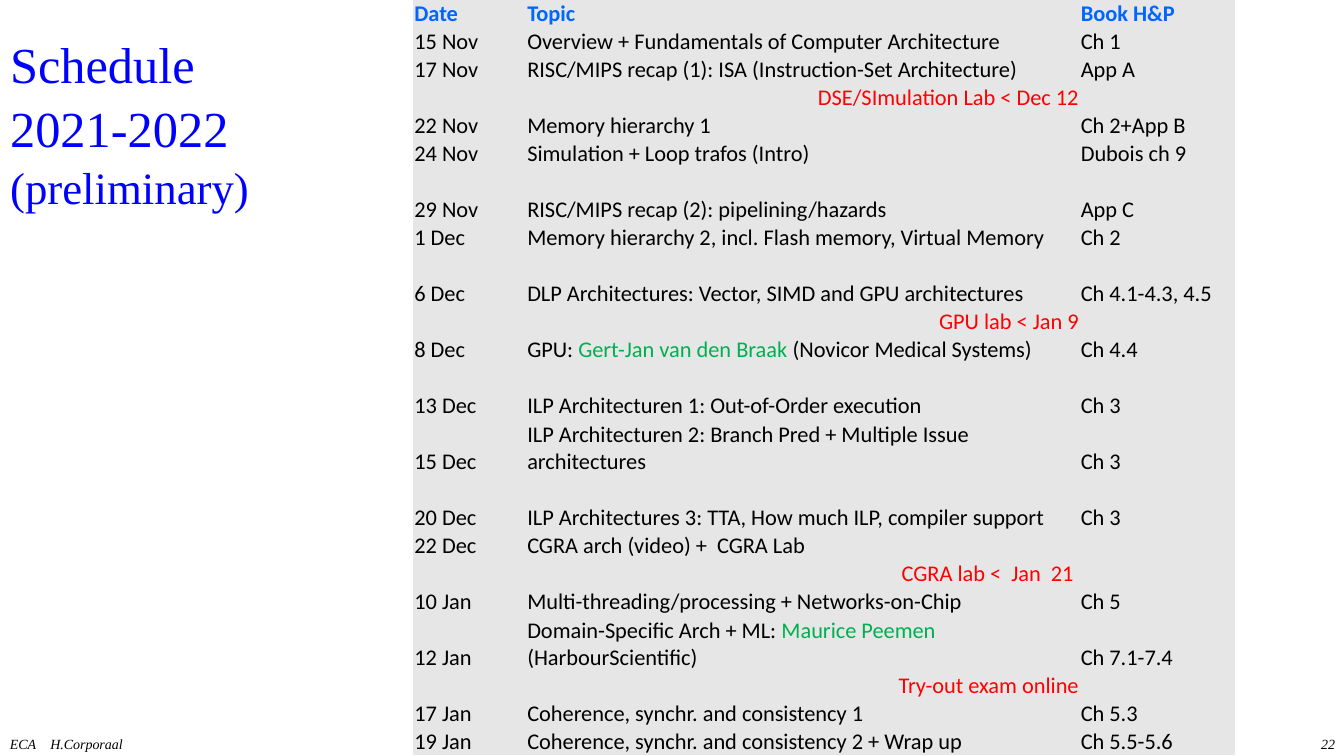
from dataclasses import dataclass

from lxml import etree
from pptx import Presentation
from pptx.dml.color import RGBColor
from pptx.enum.text import MSO_ANCHOR, MSO_AUTO_SIZE, PP_ALIGN
from pptx.oxml.ns import qn
from pptx.util import Inches, Pt

LEFT, RIGHT = PP_ALIGN.LEFT, PP_ALIGN.RIGHT
MIDDLE, BOTTOM = MSO_ANCHOR.MIDDLE, MSO_ANCHOR.BOTTOM
NO_AUTOFIT = MSO_AUTO_SIZE.NONE
TITLE_ONLY = 5
PLAIN_TABLE_STYLE = "{2D5ABB26-0587-4C30-8999-92F81FD0307C}"


@dataclass(frozen=True)
class Theme:
    """Colours, fonts and type sizes of the slide."""

    title: str = "0000FF"
    heading: str = "0066FF"
    text: str = "000000"
    deadline: str = "FF0000"
    speaker: str = "00B050"
    panel: str = "E6E6E6"
    serif: str = "Times New Roman"
    sans: str = "Calibri"
    title_size: int = 36
    subtitle_size: int = 32
    table_size: int = 16
    footer_size: int = 10


THEME = Theme()

HEADINGS = ("Date", "Topic", "Book H&P")
COLUMN_WIDTHS = (1.12, 5.49, 1.54)
TWO_LINE_DATES = {"15 Dec", "12 Jan"}
WEEK_BREAK = ()
SCHEDULE = [
    ("15 Nov", "Overview + Fundamentals of Computer Architecture", "Ch 1"),
    ("17 Nov", "RISC/MIPS recap (1): ISA (Instruction-Set Architecture)", "App A"),
    ("DSE/SImulation Lab < Dec 12",),
    ("22 Nov", "Memory hierarchy 1", "Ch 2+App B"),
    ("24 Nov", "Simulation + Loop trafos (Intro)", "Dubois ch 9"),
    WEEK_BREAK,
    ("29 Nov", "RISC/MIPS recap (2): pipelining/hazards", "App C"),
    ("1 Dec", "Memory hierarchy 2, incl. Flash memory, Virtual Memory", "Ch 2"),
    WEEK_BREAK,
    ("6 Dec", "DLP Architectures: Vector, SIMD and GPU architectures", "Ch 4.1-4.3, 4.5"),
    ("GPU lab < Jan 9",),
    ("8 Dec", ("GPU: ", "Gert-Jan van den Braak", " (Novicor Medical Systems)"), "Ch 4.4"),
    WEEK_BREAK,
    ("13 Dec", "ILP Architecturen 1: Out-of-Order execution", "Ch 3"),
    ("15 Dec", "ILP Architecturen 2: Branch Pred + Multiple Issue architectures", "Ch 3"),
    WEEK_BREAK,
    ("20 Dec", "ILP Architectures 3: TTA, How much ILP, compiler support", "Ch 3"),
    ("22 Dec", "CGRA arch (video) +  CGRA Lab", ""),
    ("CGRA lab <  Jan  21 ",),
    ("10 Jan", "Multi-threading/processing + Networks-on-Chip", "Ch 5"),
    ("12 Jan", ("Domain-Specific Arch + ML: ", "Maurice Peemen", " (HarbourScientific)"), "Ch 7.1-7.4"),
    ("Try-out exam online",),
    ("17 Jan", "Coherence, synchr. and consistency 1", "Ch 5.3"),
    ("19 Jan", "Coherence, synchr. and consistency 2 + Wrap up", "Ch 5.5-5.6"),
]


def write(paragraph, text, size, font=THEME.serif, color=THEME.text,
          bold=False, italic=False, align=LEFT):
    """Append one formatted run to a paragraph."""
    paragraph.alignment = align
    run = paragraph.add_run()
    run.text = text
    run.font.size = Pt(size)
    run.font.name = font
    run.font.bold = bold
    run.font.italic = italic
    run.font.color.rgb = RGBColor.from_string(color)


def add_title(slide, left, top, width, height):
    """Fill the title placeholder with the three-line heading."""
    title = slide.shapes.title
    title.left, title.top = Inches(left), Inches(top)
    title.width, title.height = Inches(width), Inches(height)
    frame = title.text_frame
    frame.auto_size = NO_AUTOFIT
    frame.vertical_anchor = MIDDLE
    heading = frame.paragraphs[0]
    heading.line_spacing = 1.05
    for line in ("Schedule ", "2021-2022 "):
        write(heading, line, THEME.title_size, color=THEME.title)
        heading.add_line_break()
    write(heading, "(preliminary)", THEME.subtitle_size, color=THEME.title)


def add_footer(slide, text, left, top, width, height, align=LEFT, tab=None):
    """Place one italic footer text, with an optional tab stop."""
    box = slide.shapes.add_textbox(Inches(left), Inches(top), Inches(width), Inches(height))
    box.text_frame.word_wrap = True
    paragraph = box.text_frame.paragraphs[0]
    write(paragraph, text, THEME.footer_size, italic=True, align=align)
    if tab:
        stops = etree.SubElement(paragraph._p.get_or_add_pPr(), qn("a:tabLst"))
        etree.SubElement(stops, qn("a:tab"), pos=str(Inches(tab)), algn="l")


def fill_cell(cell, content, **style):
    """Format one schedule cell; a three-part content names a guest speaker."""
    cell.fill.solid()
    cell.fill.fore_color.rgb = RGBColor.from_string(THEME.panel)
    cell.vertical_anchor = BOTTOM
    cell.margin_left = cell.margin_right = Inches(0.01)
    cell.margin_top = cell.margin_bottom = Inches(0)
    paragraph = cell.text_frame.paragraphs[0]
    if not content:
        etree.SubElement(paragraph._p, qn("a:endParaRPr"), sz=str(THEME.table_size * 100))
    elif isinstance(content, tuple):
        for part, color in zip(content, (THEME.text, THEME.speaker, THEME.text)):
            write(paragraph, part, THEME.table_size, font=THEME.sans, color=color)
    else:
        write(paragraph, content, THEME.table_size, font=THEME.sans, **style)


def add_schedule(slide, left, top, width, height):
    """Build the lecture table, sharing its height out by text lines."""
    entries = [HEADINGS, *SCHEDULE]
    frame = slide.shapes.add_table(len(entries), len(HEADINGS), Inches(left), Inches(top),
                                   Inches(width), Inches(height))
    table = frame.table
    table.first_row = table.horz_banding = False
    table._tbl.tblPr.find(qn("a:tableStyleId")).text = PLAIN_TABLE_STYLE
    for column, column_width in zip(table.columns, COLUMN_WIDTHS):
        column.width = Inches(column_width)
    line_height = height / (len(entries) + len(TWO_LINE_DATES))
    for row, entry in zip(table.rows, entries):
        lines = 2 if entry and entry[0] in TWO_LINE_DATES else 1
        row.height = Inches(line_height * lines)
        style = {}
        if entry is HEADINGS:
            style = {"color": THEME.heading, "bold": True}
        elif len(entry) == 1:
            style = {"color": THEME.deadline, "align": RIGHT}
            entry = ("", entry[0], "")
        for cell, content in zip(row.cells, entry or ("", "", "")):
            fill_cell(cell, content, **style)


def main():
    """Build the schedule slide and save it."""
    deck = Presentation()
    deck.slide_width, deck.slide_height = Inches(13.33), Inches(7.5)
    slide = deck.slides.add_slide(deck.slide_layouts[TITLE_ONLY])
    add_title(slide, 0, 0.17, 3, 2.08)
    add_footer(slide, "ECA\tH.Corporaal", 0, 7.25, 2.78, 0.25, tab=0.4)
    add_footer(slide, "22", 10.56, 7.25, 2.78, 0.25, align=RIGHT)
    add_schedule(slide, 4.1, 0, sum(COLUMN_WIDTHS), 7.5)
    deck.save("out.pptx")


if __name__ == "__main__":
    main()
